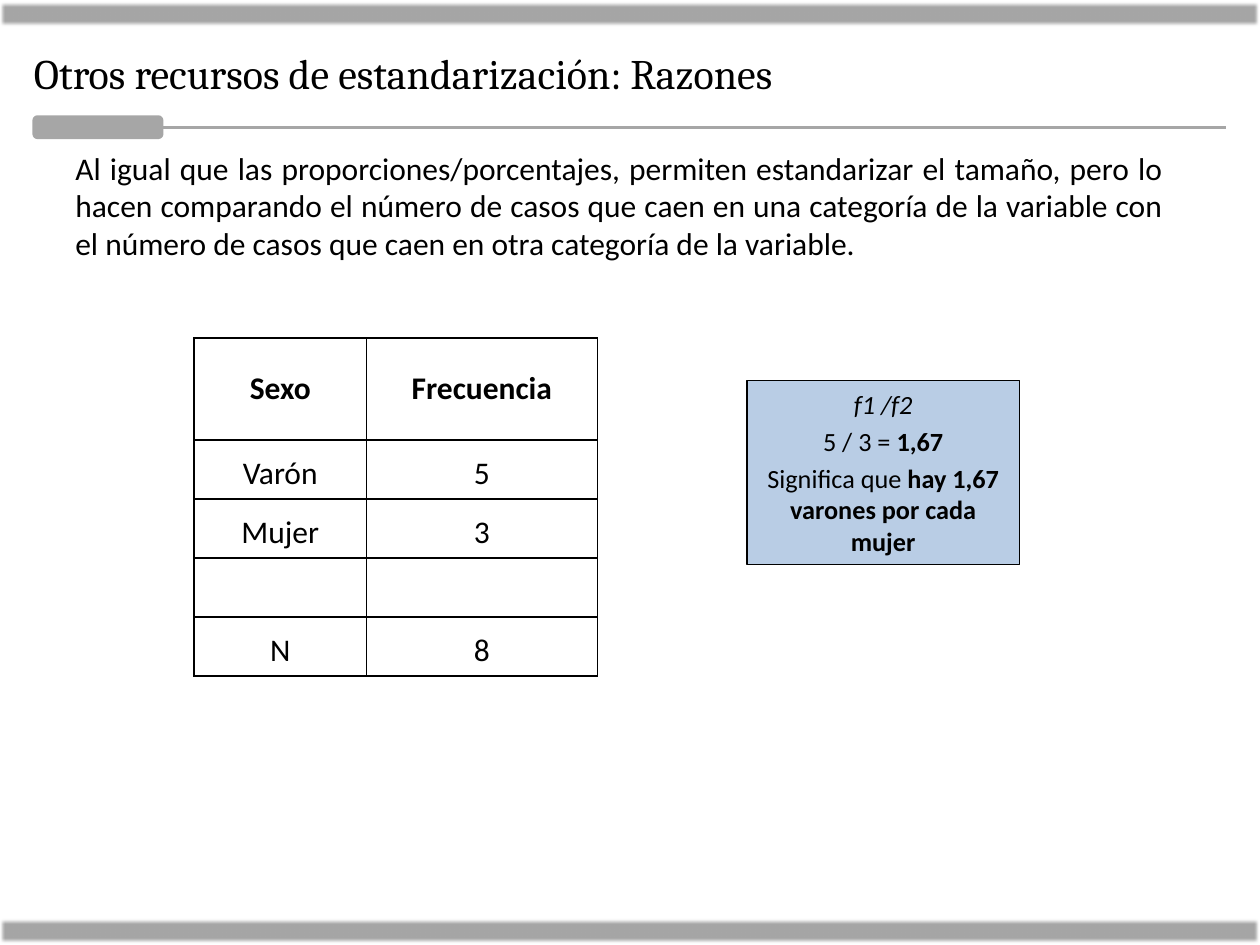
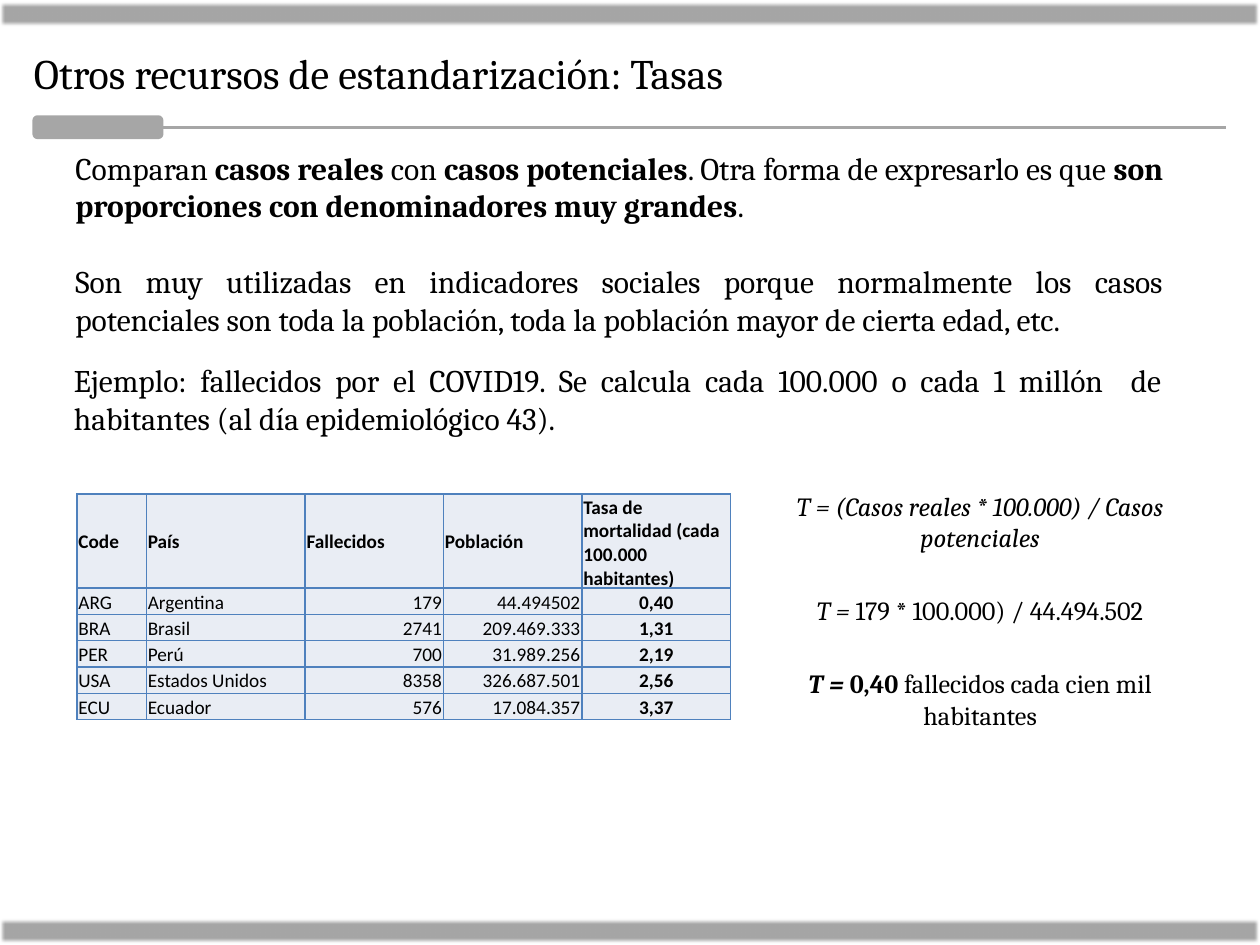
from dataclasses import dataclass
from typing import Optional

from lxml import etree
from pptx import Presentation, util as u
from pptx.dml.color import RGBColor
from pptx.enum import shapes, text
from pptx.oxml import ns

INK = {
    "text": "000000",
    "band": "A6A6A6",
    "note": "B9CDE5",
    "grid": "4F81BD",
    "cell": "E9EDF4",
}
SANS, SERIF = "Calibri", "Cambria"
WIDE, HIGH = 25.4, 19.05
BAND = 0.51
LEFT, MID, RIGHT, JUST = (text.PP_ALIGN.LEFT, text.PP_ALIGN.CENTER,
                          text.PP_ALIGN.RIGHT, text.PP_ALIGN.JUSTIFY)
TOP, CORE, BASE = (text.MSO_ANCHOR.TOP, text.MSO_ANCHOR.MIDDLE,
                   text.MSO_ANCHOR.BOTTOM)


@dataclass
class Run:
    words: str
    bold: bool = False
    ital: bool = False


@dataclass
class Box:
    """A block of text; lengths in cm, gaps in points."""
    area: tuple
    paras: list
    font: str
    size: int = 18
    align: int = JUST
    hold: int = TOP
    lead: float = 0
    gap: float = 0
    fill: Optional[str] = None


@dataclass
class Grid:
    """A table; lengths in cm."""
    left: float
    top: float
    cols: list
    head: float
    row: float
    size: int
    line: str
    fill: Optional[str]
    pad: tuple
    heads: list
    rows: list
    aligns: list
    crown: int = LEFT
    bold: Optional[int] = None


def tint(name: str) -> RGBColor:
    return RGBColor.from_string(INK[name])


def cm(*nums: float) -> list:
    return [u.Cm(n) for n in nums]


def write(para, runs: list, font: str, size: int, align: int) -> None:
    para.alignment = align
    for part in runs:
        run = para.add_run()
        run.text = part.words
        face = run.font
        face.name, face.size = font, u.Pt(size)
        face.bold, face.italic = part.bold, part.ital
        face.color.rgb = tint("text")


def add_box(slide, box: Box) -> None:
    if box.fill:
        shape = slide.shapes.add_shape(shapes.MSO_SHAPE.RECTANGLE, *cm(*box.area))
        shape.shadow.inherit = False
        shape.fill.solid()
        shape.fill.fore_color.rgb = tint(box.fill)
        shape.line.color.rgb = tint("text")
        shape.line.width = u.Pt(0.75)
    else:
        shape = slide.shapes.add_textbox(*cm(*box.area))
    frame = shape.text_frame
    frame.word_wrap = True
    frame.vertical_anchor = box.hold
    for i, runs in enumerate(box.paras):
        para = frame.add_paragraph() if i else frame.paragraphs[0]
        para.space_before = u.Pt(box.lead)
        if i < len(box.paras) - 1:
            para.space_after = u.Pt(box.gap)
        write(para, runs, box.font, box.size, box.align)


def edge(cell, name: str) -> None:
    props = cell._tc.get_or_add_tcPr()
    for side in ("lnL", "lnR", "lnT", "lnB"):
        line = etree.SubElement(props, ns.qn(f"a:{side}"), w=str(u.Pt(1)))
        fill = etree.SubElement(line, ns.qn("a:solidFill"))
        etree.SubElement(fill, ns.qn("a:srgbClr"), val=INK[name])


def add_grid(slide, grid: Grid) -> None:
    rows = [grid.heads, *grid.rows]
    highs = [grid.head] + [grid.row] * len(grid.rows)
    table = slide.shapes.add_table(
        len(rows), len(grid.cols),
        *cm(grid.left, grid.top, sum(grid.cols), sum(highs))).table
    table.first_row = table.horz_banding = False
    for col, wide in zip(table.columns, grid.cols):
        col.width = u.Cm(wide)
    for r, (row, high) in enumerate(zip(rows, highs)):
        table.rows[r].height = u.Cm(high)
        for c, words in enumerate(row):
            cell = table.cell(r, c)
            (cell.margin_left, cell.margin_top,
             cell.margin_right, cell.margin_bottom) = cm(*grid.pad)
            cell.vertical_anchor = BASE if r else CORE
            edge(cell, grid.line)
            if grid.fill:
                cell.fill.solid()
                cell.fill.fore_color.rgb = tint(grid.fill)
            else:
                cell.fill.background()
            if words:
                run = Run(words, bold=r == 0 or c == grid.bold)
                write(cell.text_frame.paragraphs[0], [run], SANS, grid.size,
                      grid.aligns[c] if r else grid.crown)


def add_bar(slide, kind: int, area: tuple):
    bar = slide.shapes.add_shape(kind, *cm(*area))
    bar.shadow.inherit = False
    bar.fill.solid()
    bar.fill.fore_color.rgb = tint("band")
    bar.line.fill.background()
    return bar


def add_page(deck, name: str):
    """Start a slide with its title, bands and title rule."""
    slide = deck.slides.add_slide(deck.slide_layouts[5])
    title = slide.shapes.title
    title.left, title.top, title.width, title.height = cm(0.43, 0.84, 24.28, 1.27)
    frame = title.text_frame
    frame.auto_size = text.MSO_AUTO_SIZE.NONE
    frame.vertical_anchor = TOP
    write(frame.paragraphs[0], [Run(name)], SERIF, 24, LEFT)

    # Bands with soft edges
    for top in (0.03, HIGH - BAND - 0.02):
        band = add_bar(slide, shapes.MSO_SHAPE.RECTANGLE, (0, top, WIDE, BAND))
        glow = band._element.spPr.find(ns.qn("a:effectLst"))
        etree.SubElement(glow, ns.qn("a:softEdge"), rad=str(u.Pt(2)))

    # Tab and rule under the title
    tab = add_bar(slide, shapes.MSO_SHAPE.ROUNDED_RECTANGLE, (0.69, 2.36, 2.57, 0.41))
    tab.line.color.rgb = tint("band")
    tab.line.width = u.Pt(2)
    rule = slide.shapes.add_connector(
        shapes.MSO_CONNECTOR.STRAIGHT, *cm(3.12, 2.57, 24.71, 2.57))
    rule.line.color.rgb = tint("band")
    rule.line.width = u.Pt(1.25)
    etree.SubElement(rule._element.spPr, ns.qn("a:effectLst"))
    return slide


def ratios(deck) -> None:
    slide = add_page(deck, "Otros recursos de estandarización: Razones")
    add_box(slide, Box((1.27, 2.87, 22.43, 2.57), [[Run(
        "Al igual que las proporciones/porcentajes, permiten estandarizar el "
        "tamaño, pero lo hacen comparando el número de casos que caen en una "
        "categoría de la variable con el número de casos que caen en otra "
        "categoría de la variable.")]], SANS))
    add_grid(slide, Grid(
        3.91, 6.81, [3.48, 4.65], 2.06, 1.19, 18, "text", None,
        (0.25, 0.13, 0.25, 0.13), ["Sexo", "Frecuencia"],
        [["Varón", "5"], ["Mujer", "3"], ["", ""], ["N", "8"]],
        [MID, MID], crown=MID))
    add_box(slide, Box((15.06, 7.67, 5.49, 3.71), [
        [Run("f1 /f2", ital=True)],
        [Run("5 / 3 = "), Run("1,67", bold=True)],
        [Run("Significa que "), Run("hay 1,67 varones por cada mujer", bold=True)],
    ], SANS, 15, MID, CORE, lead=3, fill="note"))


def rates(deck) -> None:
    slide = add_page(deck, "Otros recursos de estandarización: Tasas")
    add_box(slide, Box((1.27, 2.87, 22.43, 4.11), [
        [Run("Comparan "), Run("casos reales", bold=True), Run(" con "),
         Run("casos potenciales", bold=True),
         Run(". Otra forma de expresarlo es que "),
         Run("son proporciones con denominadores muy grandes", bold=True),
         Run(".")],
        [Run("Son muy utilizadas en indicadores sociales porque normalmente "
             "los casos potenciales son toda la población, toda la población "
             "mayor de cierta edad, etc.")],
    ], SERIF, gap=21.7))
    add_box(slide, Box((1.24, 7.16, 22.43, 1.8), [[Run(
        "Ejemplo: fallecidos por el COVID19. Se calcula cada 100.000 o cada "
        "1 millón  de habitantes (al día epidemiológico 43).")]], SERIF))

    # Worked formula
    add_box(slide, Box((15.44, 8.9, 8.64, 6.81), [
        [Run("T = (Casos reales * 100.000) / Casos potenciales", ital=True)],
        [Run("T = ", ital=True), Run("179 * 100.000) / 44.494.502")],
        [Run("T = ", bold=True, ital=True), Run("0,40 ", bold=True),
         Run("fallecidos cada cien mil habitantes")],
    ], SERIF, 15, MID, CORE, gap=23.7))

    # Deaths by country
    add_grid(slide, Grid(
        1.55, 9.96, [1.4, 3.2, 2.79, 2.79, 3.0], 1.88, 0.53, 11, "grid", "cell",
        (0.03, 0.03, 0.03, 0),
        ["Code", "País", "Fallecidos", "Población",
         "Tasa de mortalidad (cada 100.000 habitantes)"],
        [["ARG", "Argentina", "179", "44.494502", "0,40"],
         ["BRA", "Brasil", "2741", "209.469.333", "1,31"],
         ["PER", "Perú", "700", "31.989.256", "2,19"],
         ["USA", "Estados Unidos", "8358", "326.687.501", "2,56"],
         ["ECU", "Ecuador", "576", "17.084.357", "3,37"]],
        [LEFT, LEFT, RIGHT, RIGHT, MID], bold=4))


def main() -> None:
    deck = Presentation()
    deck.slide_width, deck.slide_height = cm(WIDE, HIGH)
    ratios(deck)
    rates(deck)
    deck.save("out.pptx")


if __name__ == "__main__":
    main()
